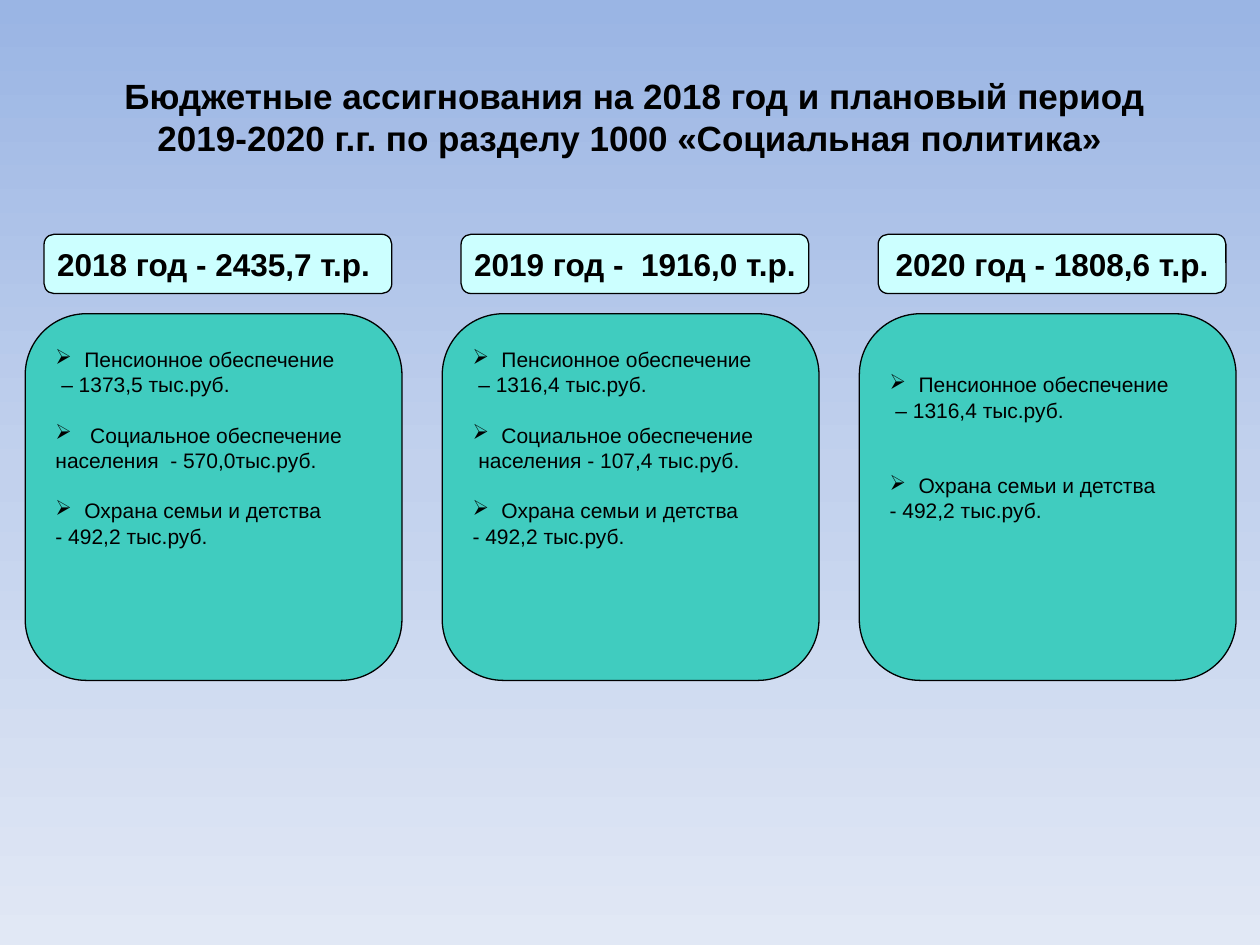
import copy
import pptx
import pptx.util
import pptx.dml.color
import pptx.enum.shapes
import pptx.enum.text
import pptx.oxml
import pptx.oxml.ns

Inches, Pt = pptx.util.Inches, pptx.util.Pt
RGBColor = pptx.dml.color.RGBColor
ALIGN = pptx.enum.text.PP_ALIGN
ANCHOR = pptx.enum.text.MSO_ANCHOR
qn = pptx.oxml.ns.qn

BLACK = RGBColor(0x00, 0x00, 0x00)
PALE = RGBColor(0xCC, 0xFF, 0xFF)
TEAL = RGBColor(0x40, 0xCC, 0xBF)
SKY = [
    (0, RGBColor(0x9A, 0xB5, 0xE4)),
    (0.5, RGBColor(0xC2, 0xD1, 0xED)),
    (1, RGBColor(0xE1, 0xE8, 0xF5)),
]

TITLE = (" Бюджетные ассигнования на 2018 год и плановый период "
         "2019-2020 г.г. по разделу 1000 «Социальная политика»")
YEARS = [
    ("2018 год - 2435,7 т.р. ", [
        ("Пенсионное обеспечение", " – 1373,5 тыс.руб."),
        (" Социальное обеспечение", "населения  - 570,0тыс.руб."),
        ("Охрана семьи и детства", "- 492,2 тыс.руб."),
    ]),
    ("2019 год -  1916,0 т.р.", [
        ("Пенсионное обеспечение", " – 1316,4 тыс.руб."),
        ("Социальное обеспечение", " населения - 107,4 тыс.руб."),
        ("Охрана семьи и детства", "- 492,2 тыс.руб."),
    ]),
    ("2020 год - 1808,6 т.р.", [
        ("Пенсионное обеспечение", " – 1316,4 тыс.руб."),
        ("Охрана семьи и детства", "- 492,2 тыс.руб."),
    ]),
]

LEFT, STEP = 0.2, 3.31
HEAD = (0.15, 1.86, 2.76, 0.47)
CARD = (0, 2.49, 2.99, 2.91)
LINE = 14.4
INSET = 0.12
HANG = Inches(0.23)


def style(para, size, bold=False):
    for run in para.runs:
        font = run.font
        font.name, font.size, font.bold = "Arial", Pt(size), bold
        font.color.rgb = BLACK


def add_box(slide, col, place, fill):
    shift, top, width, height = place
    box = slide.shapes.add_shape(
        pptx.enum.shapes.MSO_SHAPE.ROUNDED_RECTANGLE,
        Inches(LEFT + col * STEP + shift), Inches(top),
        Inches(width), Inches(height))
    box.shadow.inherit = False
    box.fill.solid()
    box.fill.fore_color.rgb = fill
    box.line.color.rgb = BLACK
    box.line.width = Pt(0.75)
    return box


def add_head(slide, col, text):
    frame = add_box(slide, col, HEAD, PALE).text_frame
    frame.word_wrap = False
    frame.vertical_anchor = ANCHOR.MIDDLE
    frame.text = text
    para = frame.paragraphs[0]
    para.alignment = ALIGN.CENTER
    style(para, 18, True)


def add_bullet(para):
    props = para._p.get_or_add_pPr()
    props.set("marL", str(HANG))
    props.set("indent", str(-HANG))
    font = pptx.oxml.parse_xml(
        f'<a:buFont {pptx.oxml.ns.nsdecls("a")} typeface="Wingdings"/>')
    mark = pptx.oxml.parse_xml(
        f'<a:buChar {pptx.oxml.ns.nsdecls("a")} char="Ø"/>')
    props.extend([font, mark])


def add_card(slide, col, items):
    spare = 3 - len(items)
    frame = add_box(slide, col, CARD, TEAL).text_frame
    frame.word_wrap = True
    frame.vertical_anchor = ANCHOR.TOP
    frame.margin_top = Inches(INSET) + Pt(LINE * spare)
    for row, pair in enumerate(items):
        for part, text in enumerate(pair):
            first = row == part == 0
            para = frame.paragraphs[0] if first else frame.add_paragraph()
            para.text = text
            para.alignment = ALIGN.LEFT
            if part == 0:
                para.space_before = Pt(LINE * (1 + spare) if row else 0)
                add_bullet(para)
            style(para, 12)


def paint(slide):
    fill = slide.background.fill
    fill.gradient()
    fill.gradient_angle = 270
    stops = slide.element.find(".//" + qn("a:gsLst"))
    stops.insert(1, copy.deepcopy(stops[0]))
    for stop, (pos, color) in zip(fill.gradient_stops, SKY):
        stop.position = pos
        stop.color.rgb = color


def main():
    deck = pptx.Presentation()
    deck.slide_width, deck.slide_height = Inches(10), Inches(7.5)
    slide = deck.slides.add_slide(deck.slide_layouts[5])
    paint(slide)
    title = slide.shapes.title
    title.left, title.top = Inches(0.5), Inches(0.3)
    title.width, title.height = Inches(9), Inches(1.25)
    title.text_frame.text = TITLE
    title.text_frame.vertical_anchor = ANCHOR.MIDDLE
    title.text_frame.paragraphs[0].alignment = ALIGN.CENTER
    style(title.text_frame.paragraphs[0], 20, True)
    for col, (head, items) in enumerate(YEARS):
        add_head(slide, col, head)
        add_card(slide, col, items)
    deck.save("out.pptx")


if __name__ == "__main__":
    main()
